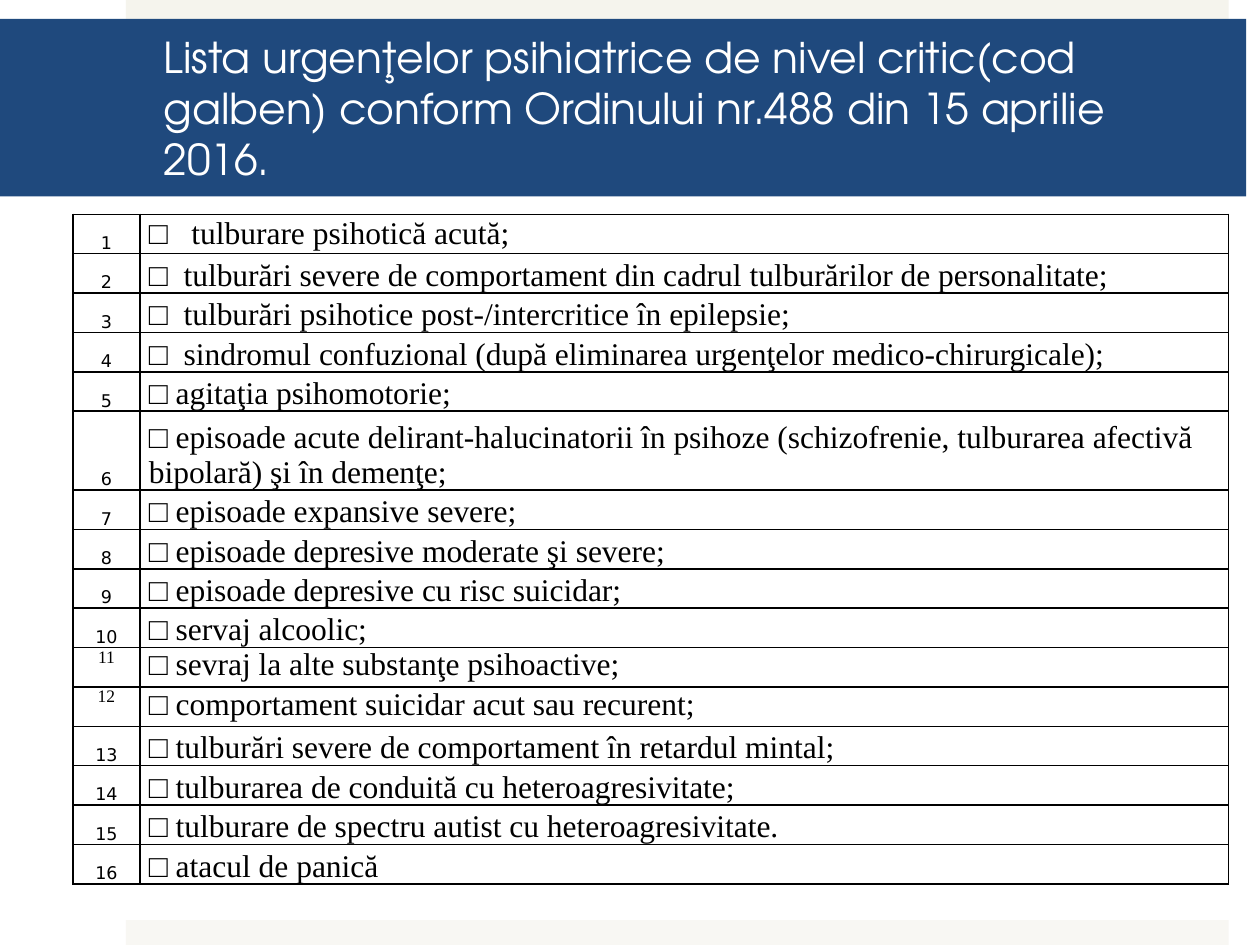
from lxml import etree
from pptx import Presentation
from pptx import util as u
from pptx.dml.color import RGBColor
from pptx.enum import shapes, text
from pptx.oxml.ns import qn

NAVY = RGBColor(0x1F, 0x49, 0x7D)
CREAM = RGBColor(0xF5, 0xF4, 0xED)
PALE = RGBColor(0xF8, 0xF7, 0xF3)
WHITE = RGBColor(0xFF, 0xFF, 0xFF)
BLACK = RGBColor(0, 0, 0)

SERIF, SANS, HEAD = "Times New Roman", "DejaVu Sans", "TeX Gyre Adventor"
BOX = "□"
TITLE = ("Lista urgenţelor psihiatrice de nivel critic(cod galben) "
         "conform Ordinului nr.488 din 15 aprilie 2016.")
ITEMS = [
    "  tulburare psihotică acută;",
    " tulburări severe de comportament din cadrul tulburărilor de personalitate;",
    " tulburări psihotice post-/intercritice în epilepsie;",
    " sindromul confuzional (după eliminarea urgenţelor medico-chirurgicale);",
    "agitaţia psihomotorie;",
    "episoade acute delirant-halucinatorii în psihoze (schizofrenie, "
    "tulburarea afectivă bipolară) şi în demenţe;",
    "episoade expansive severe;",
    "episoade depresive moderate şi severe;",
    "episoade depresive cu risc suicidar;",
    "servaj alcoolic;",
    "sevraj la alte substanţe psihoactive;",
    "comportament suicidar acut sau recurent;",
    "tulburări severe de comportament în retardul mintal;",
    "tulburarea de conduită cu heteroagresivitate;",
    "tulburare de spectru autist cu heteroagresivitate.",
    "atacul de panică",
]
TALL = 6            # the item that takes two lines
TOPS = (11, 12)     # items set at the top of their cells
BOLD = 7            # first item with a bold box
HIGH = 13.5         # table height, cm


def write(frame, words, size=18, font=SERIF, color=BLACK, bold=False,
          align=text.PP_ALIGN.LEFT):
    """Add a run to the first paragraph of a text frame."""
    para = frame.paragraphs[0]
    para.alignment = align
    run = para.add_run()
    run.text = words
    run.font.size = u.Pt(size)
    run.font.name = font
    run.font.bold = bold
    run.font.color.rgb = color


def band(slide, x, y, w, h, color):
    rect = slide.shapes.add_shape(shapes.MSO_SHAPE.RECTANGLE,
                                  u.Cm(x), u.Cm(y), u.Cm(w), u.Cm(h))
    rect.shadow.inherit = False
    rect.fill.solid()
    rect.fill.fore_color.rgb = color
    rect.line.fill.background()
    return rect


def title(slide):
    frame = band(slide, 0, 0.38, 25.12, 3.58, NAVY).text_frame
    frame.word_wrap = True
    frame.vertical_anchor = text.MSO_ANCHOR.MIDDLE
    frame.margin_left, frame.margin_right = u.Cm(3.3), u.Cm(0.76)
    frame.margin_top = frame.margin_bottom = u.Cm(0.13)
    write(frame, TITLE, size=24.3, font=HEAD, color=WHITE)


def style(cell, anchor):
    """Set margins, anchor and black borders, without a fill."""
    cell.margin_left = cell.margin_right = u.Cm(0.18)
    cell.margin_top = cell.margin_bottom = 0
    cell.vertical_anchor = anchor
    props = cell._tc.get_or_add_tcPr()
    for side in ("a:lnL", "a:lnR", "a:lnT", "a:lnB"):
        line = etree.SubElement(props, qn(side), w=str(u.Pt(1)))
        fill = etree.SubElement(line, qn("a:solidFill"))
        etree.SubElement(fill, qn("a:srgbClr"), val=str(BLACK))
    cell.fill.background()


def table(slide):
    wide = (1.35, 21.95)
    grid = slide.shapes.add_table(len(ITEMS), 2, u.Cm(1.47), u.Cm(4.32),
                                  u.Cm(sum(wide)), u.Cm(HIGH)).table
    grid.first_row = grid.horz_banding = False
    for col, w in zip(grid.columns, wide):
        col.width = u.Cm(w)

    step = HIGH / (len(ITEMS) + 1)
    for num, item in enumerate(ITEMS, 1):
        row = grid.rows[num - 1]
        row.height = u.Cm(step * (2 if num == TALL else 1))
        left, right = row.cells
        top = num in TOPS
        anchor = text.MSO_ANCHOR.TOP if top else text.MSO_ANCHOR.BOTTOM
        style(left, anchor)
        style(right, text.MSO_ANCHOR.MIDDLE if num == 1 else anchor)
        write(left.text_frame, str(num), size=10,
              font=SERIF if top else SANS, align=text.PP_ALIGN.CENTER)
        if num >= BOLD and not top:
            write(right.text_frame, BOX + " ", bold=True)
            write(right.text_frame, item)
        else:
            write(right.text_frame, f"{BOX} {item}")


def main():
    deck = Presentation()
    deck.slide_width, deck.slide_height = u.Cm(25.4), u.Cm(19.05)
    slide = deck.slides.add_slide(deck.slide_layouts[6])

    # Edge strips
    band(slide, 2.54, 0, 22.23, 0.5, CREAM)
    band(slide, 2.54, 18.55, 22.23, 0.5, PALE)

    # Title and list
    title(slide)
    table(slide)
    deck.save("out.pptx")


if __name__ == "__main__":
    main()
